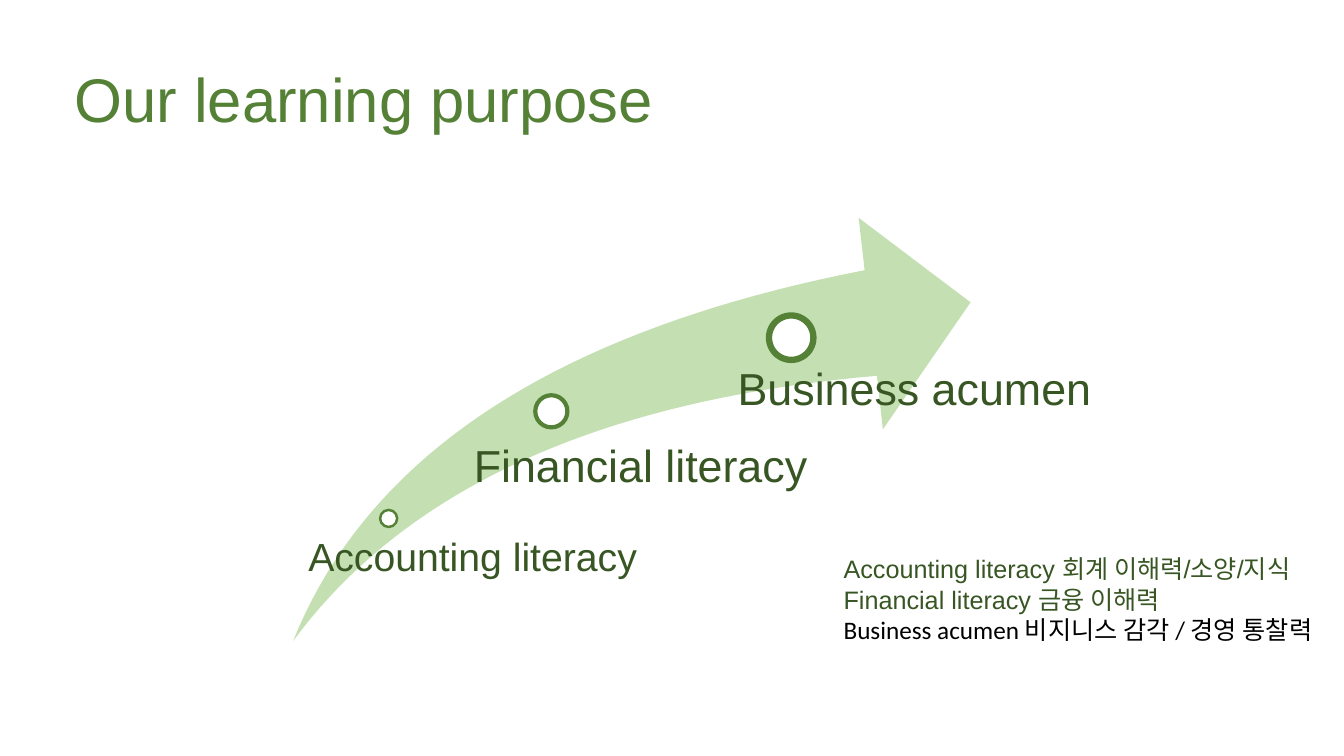
from pptx import Presentation
from pptx.dml.color import RGBColor
from pptx.enum.shapes import MSO_SHAPE as Shape
from pptx.enum.text import MSO_ANCHOR as Anchor, MSO_AUTO_SIZE as AutoSize
from pptx.util import Cm, Pt

WHITE = RGBColor(0xFF, 0xFF, 0xFF)
BLACK = RGBColor(0x00, 0x00, 0x00)
GREEN = RGBColor(0x54, 0x81, 0x35)
DARK_GREEN = RGBColor(0x38, 0x56, 0x23)
LIGHT_GREEN = RGBColor(0xC4, 0xE0, 0xB2)

CURVE_STEPS = 40
TAIL = (7.39, 16.15)
UPPER_CURVE = (TAIL, (9.3, 11.4), (14.1, 8.31), (21.79, 6.81))
ARROW_HEAD = [(21.64, 5.49), (24.46, 7.62), (22.25, 10.82)]
LOWER_CURVE = ((22.1, 9.47), (15.14, 10.08), (10.24, 12.29), TAIL)

STAGES = [
    ("Accounting literacy", 28, (7.54, 13.54, 11.25, 1.83), 0.23,
     (9.58, 12.85, 0.43), 1.75),
    ("Financial literacy", 32, (11.51, 11.18, 12.85, 1.73), 0.43,
     (13.49, 9.96, 0.81), 3),
    ("Business acumen", 32, (18.01, 9.25, 10.64, 1.57), 0.58,
     (19.38, 7.95, 1.12), 4.5),
]

GLOSSARY = [
    ("Accounting literacy 회계 이해력/소양/지식", "Arial", DARK_GREEN),
    ("Financial literacy 금융 이해력", "Arial", DARK_GREEN),
    ("Business acumen 비지니스 감각 / 경영 통찰력", "Calibri", BLACK),
]


def curve_points(start, control_1, control_2, end):
    points = []
    for step in range(CURVE_STEPS + 1):
        t = step / CURVE_STEPS
        weights = ((1 - t) ** 3, 3 * t * (1 - t) ** 2, 3 * t ** 2 * (1 - t), t ** 3)
        points.append(tuple(
            sum(weight * value for weight, value in zip(weights, values))
            for values in zip(start, control_1, control_2, end)
        ))
    return points


def add_text_box(slide, box, margins):
    text_frame = slide.shapes.add_textbox(*map(Cm, box)).text_frame
    text_frame.word_wrap = True
    (text_frame.margin_left, text_frame.margin_top,
     text_frame.margin_right, text_frame.margin_bottom) = map(Cm, margins)
    return text_frame


def format_paragraph(paragraph, size, color, font_name="Arial", line_spacing=1.0):
    paragraph.line_spacing = line_spacing
    for run in paragraph.runs:
        run.font.name = font_name
        run.font.size = Pt(size)
        run.font.color.rgb = color


def add_title(slide, text):
    text_frame = add_text_box(slide, (0.61, 0.79, 32.38, 3), (1.27, 0.13, 0.25, 0.13))
    text_frame.vertical_anchor = Anchor.MIDDLE
    text_frame.text = text
    format_paragraph(text_frame.paragraphs[0], 44, GREEN, line_spacing=1.2)


def add_growth_arrow(slide):
    outline = curve_points(*UPPER_CURVE) + ARROW_HEAD + curve_points(*LOWER_CURVE)
    points = [(Cm(x), Cm(y)) for x, y in outline]
    builder = slide.shapes.build_freeform(*points[0])
    builder.add_line_segments(points[1:], close=True)
    arrow = builder.convert_to_shape()
    arrow.shadow.inherit = False
    arrow.fill.solid()
    arrow.fill.fore_color.rgb = LIGHT_GREEN
    arrow.line.fill.background()


def add_dot(slide, left, top, diameter, line_width):
    dot = slide.shapes.add_shape(
        Shape.OVAL, Cm(left), Cm(top), Cm(diameter), Cm(diameter))
    dot.shadow.inherit = False
    dot.fill.solid()
    dot.fill.fore_color.rgb = WHITE
    dot.line.color.rgb = GREEN
    dot.line.width = Pt(line_width)


def add_stage(slide, label, size, box, inset, dot, line_width):
    add_dot(slide, *dot, line_width)
    text_frame = add_text_box(slide, box, (inset, 0, 0, 0))
    text_frame.text = label
    format_paragraph(text_frame.paragraphs[0], size, DARK_GREEN, line_spacing=0.9)


def add_glossary(slide):
    text_frame = add_text_box(
        slide, (21.01, 13.82, 16.94, 2.57), (0.25, 0.13, 0.25, 0.13))
    text_frame.auto_size = AutoSize.SHAPE_TO_FIT_TEXT
    text_frame.text = "\n".join(text for text, _, _ in GLOSSARY)
    for paragraph, (_, font_name, color) in zip(text_frame.paragraphs, GLOSSARY):
        format_paragraph(paragraph, 18, color, font_name)


def main():
    presentation = Presentation()
    presentation.slide_width = Cm(33.87)
    presentation.slide_height = Cm(19.05)
    slide = presentation.slides.add_slide(presentation.slide_layouts[6])
    add_title(slide, "Our learning purpose")
    add_growth_arrow(slide)
    for stage in STAGES:
        add_stage(slide, *stage)
    add_glossary(slide)
    presentation.save("out.pptx")


if __name__ == "__main__":
    main()
